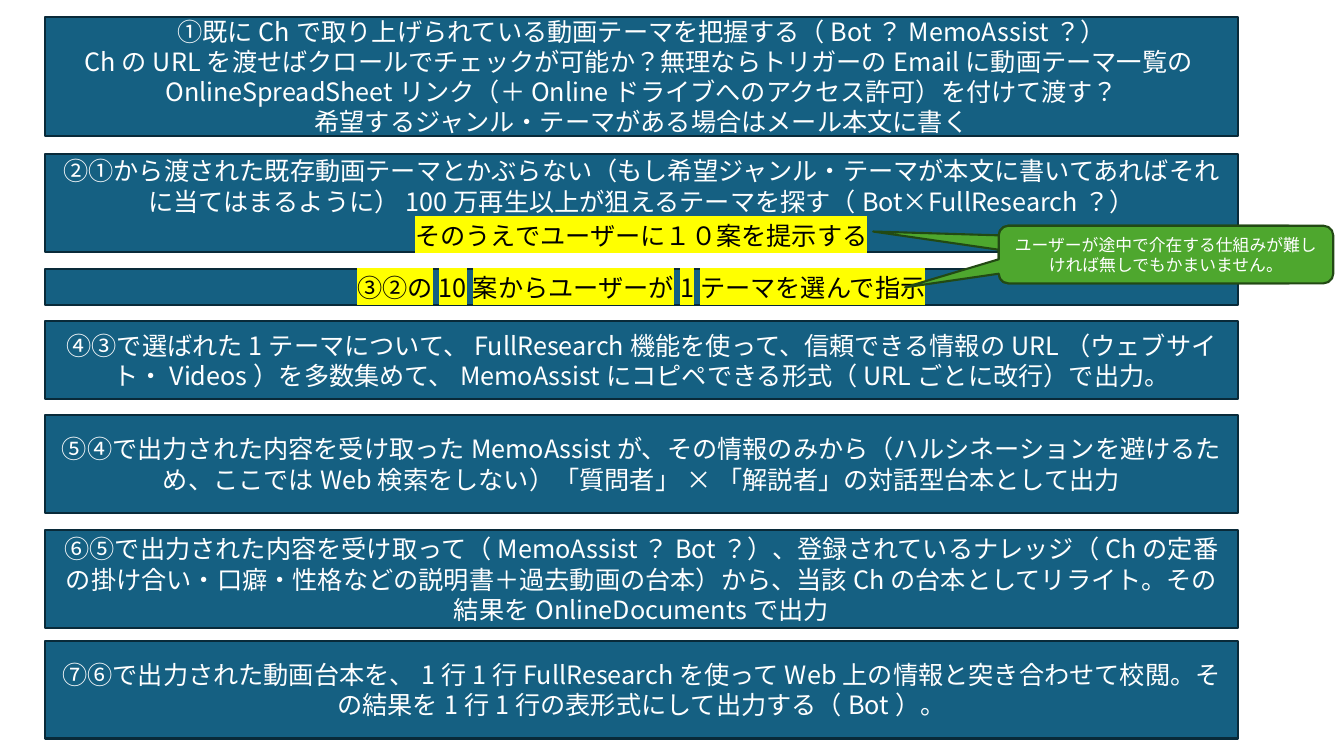
import pptx
import pptx.util
import pptx.dml.color
import pptx.enum.lang
import pptx.enum.shapes
import pptx.enum.text
import pptx.oxml
import pptx.oxml.ns
from dataclasses import dataclass

Cm = pptx.util.Cm
Pt = pptx.util.Pt
Shapes = pptx.enum.shapes.MSO_SHAPE


@dataclass(frozen=True)
class Theme:
    font: str = "Noto Sans CJK JP"
    step_size: int = 18
    note_size: int = 12
    line_width: float = 1.5
    marked_gap: int = 3
    step_fill: str = "156082"
    step_line: str = "092A39"
    note_fill: str = "4EA72E"
    note_line: str = "224914"
    text: str = "FFFFFF"
    marked_text: str = "000000"
    marker: str = "FFFF00"


theme = Theme()
color = pptx.dml.color.RGBColor.from_string


def add_box(page, kind, place, fill, line):
    box = page.shapes.add_shape(kind, *[Cm(length) for length in place])
    box.shadow.inherit = False
    box.fill.solid()
    box.fill.fore_color.rgb = color(fill)
    box.line.color.rgb = color(line)
    box.line.width = Pt(theme.line_width)
    return box


def write(box, lines, size):
    frame = box.text_frame
    frame.word_wrap = True
    frame.vertical_anchor = pptx.enum.text.MSO_ANCHOR.MIDDLE
    for index, (words, marked) in enumerate(lines):
        para = frame.add_paragraph() if index else frame.paragraphs[0]
        para.alignment = pptx.enum.text.PP_ALIGN.CENTER
        if marked and index:
            para.space_before = Pt(theme.marked_gap)
        span = para.add_run()
        span.text = words
        span.font.language_id = pptx.enum.lang.MSO_LANGUAGE_ID.JAPANESE
        span.font.size = Pt(size)
        span.font.color.rgb = color(theme.marked_text if marked else theme.text)
        properties = span.font._element
        if marked:
            properties.append(pptx.oxml.parse_xml(
                f'<a:highlight {pptx.oxml.ns.nsdecls("a")}>'
                f'<a:srgbClr val="{theme.marker}"/></a:highlight>'))
        span.font.name = theme.font
        properties.append(pptx.oxml.parse_xml(
            f'<a:ea {pptx.oxml.ns.nsdecls("a")} typeface="{theme.font}"/>'))


deck = pptx.Presentation()
deck.slide_width = Cm(33.87)
deck.slide_height = Cm(19.05)
page = deck.slides.add_slide(deck.slide_layouts[6])

steps = [
    (0.43, 3.0, [
        ("①既にChで取り上げられている動画テーマを把握する（Bot？MemoAssist？）", False),
        ("ChのURLを渡せばクロールでチェックが可能か？無理ならトリガーのEmailに動画テーマ一覧の"
         "OnlineSpreadSheetリンク（＋Onlineドライブへのアクセス許可）を付けて渡す？", False),
        ("希望するジャンル・テーマがある場合はメール本文に書く", False)]),
    (3.89, 2.46, [
        ("②①から渡された既存動画テーマとかぶらない（もし希望ジャンル・テーマが本文に書いてあればそれ"
         "に当てはまるように）100万再生以上が狙えるテーマを探す（Bot×FullResearch？）", False),
        ("そのうえでユーザーに１０案を提示する", True)]),
    (6.78, 0.91, [
        ("③②の10案からユーザーが1テーマを選んで指示", True)]),
    (8.1, 1.96, [
        ("④③で選ばれた1テーマについて、FullResearch機能を使って、信頼できる情報のURL（ウェブサイ"
         "ト・Videos）を多数集めて、MemoAssistにコピペできる形式（URLごとに改行）で出力。", False)]),
    (10.46, 2.46, [
        ("⑤④で出力された内容を受け取ったMemoAssistが、その情報のみから（ハルシネーションを避けるた"
         "め、ここではWeb検索をしない）「質問者」×「解説者」の対話型台本として出力", False)]),
    (13.36, 2.46, [
        ("⑥⑤で出力された内容を受け取って（MemoAssist？Bot？）、登録されているナレッジ（Chの定"
         "番の掛け合い・口癖・性格などの説明書＋過去動画の台本）から、当該Chの台本としてリライト。そ"
         "の結果をOnlineDocumentsで出力", False)]),
    (16.15, 2.46, [
        ("⑦⑥で出力された動画台本を、1行1行FullResearchを使ってWeb上の情報と突き合わせて校閲。"
         "その結果を1行1行の表形式にして出力する（Bot）。", False)]),
]
for top, height, lines in steps:
    step = add_box(page, Shapes.RECTANGLE, (1.14, top, 30.05, height),
                   theme.step_fill, theme.step_line)
    write(step, lines, theme.step_size)

for width, tip_x, tip_y in [(7.54, -0.92, -0.4), (8.43, -0.78, 0.57)]:
    note = add_box(page, Shapes.ROUNDED_RECTANGULAR_CALLOUT, (25.17, 5.69, width, 1.45),
                   theme.note_fill, theme.note_line)
    note.adjustments[0] = tip_x
    note.adjustments[1] = tip_y
write(note, [("ユーザーが途中で介在する仕組みが難しければ無しでもかまいません。", False)],
      theme.note_size)

deck.save("out.pptx")
